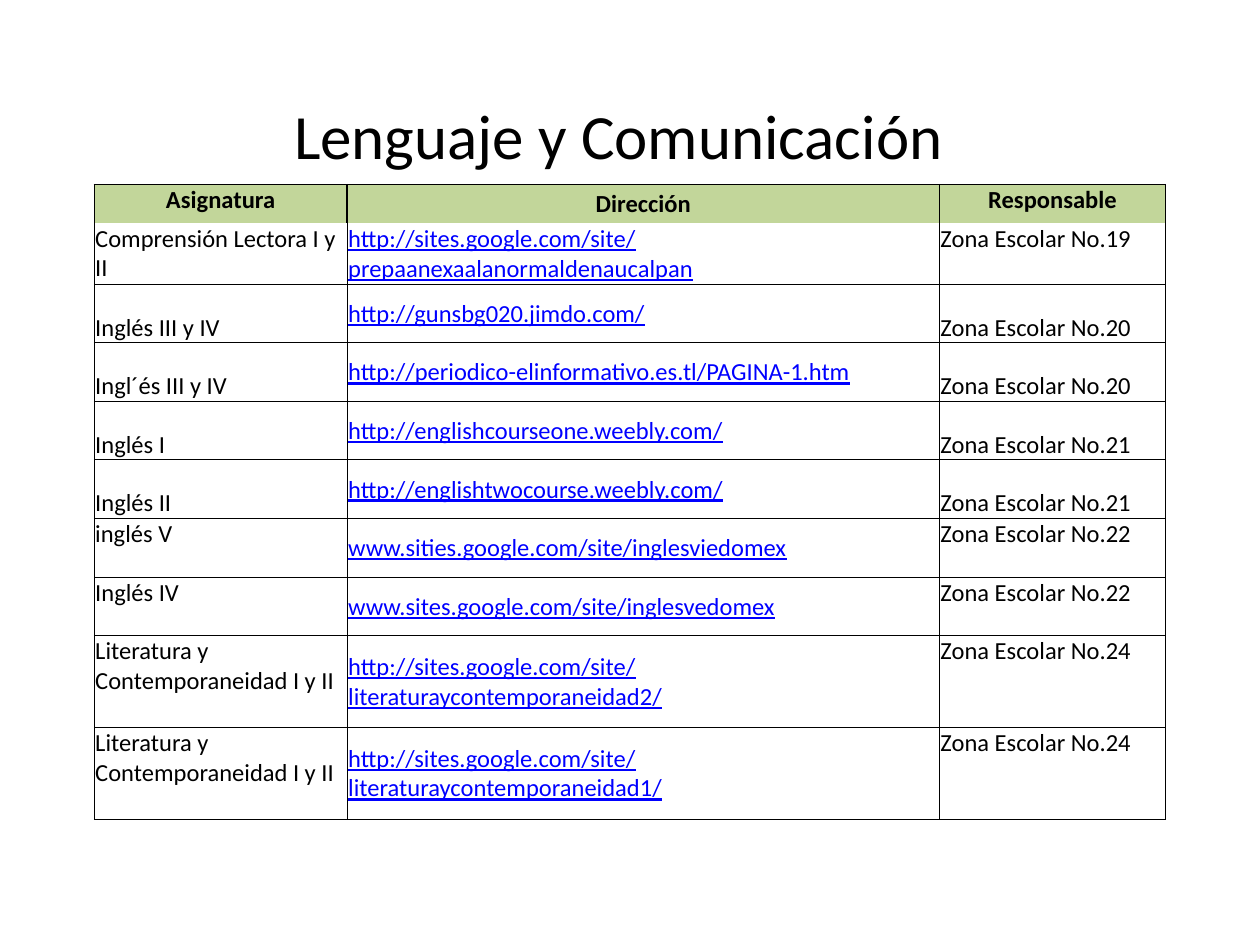
import pptx
import pptx.dml.color
import pptx.enum.text
import pptx.oxml
import pptx.oxml.ns
import pptx.util
from pptx.util import Cm

ALIGN = pptx.enum.text.PP_ALIGN
ANCHOR = pptx.enum.text.MSO_ANCHOR

HEADERS = ["Asignatura", "Dirección", "Responsable"]
# Subject, address, school zone number, anchor of the outer cells
COURSES = [
    ("Comprensión Lectora I y II", "http://sites.google.com/site/prepaanexaalanormaldenaucalpan", 19, ANCHOR.TOP),
    ("Inglés III y IV", "http://gunsbg020.jimdo.com/", 20, ANCHOR.BOTTOM),
    ("Ingl´és III y IV", "http://periodico-elinformativo.es.tl/PAGINA-1.htm", 20, ANCHOR.BOTTOM),
    ("Inglés I", "http://englishcourseone.weebly.com/", 21, ANCHOR.BOTTOM),
    ("Inglés II", "http://englishtwocourse.weebly.com/", 21, ANCHOR.BOTTOM),
    ("inglés V", "www.sities.google.com/site/inglesviedomex", 22, ANCHOR.TOP),
    ("Inglés IV", "www.sites.google.com/site/inglesvedomex", 22, ANCHOR.TOP),
    ("Literatura y Contemporaneidad I y II", "http://sites.google.com/site/literaturaycontemporaneidad2/", 24, ANCHOR.TOP),
    ("Literatura y Contemporaneidad I y II", "http://sites.google.com/site/literaturaycontemporaneidad1/", 24, ANCHOR.TOP),
]
COLUMN_WIDTHS = [5.1, 11.94, 4.56]
ROW_HEIGHTS = [0.77, 1.24] + [1.18] * 6 + [1.85] * 2


def color(value):
    return pptx.dml.color.RGBColor.from_string(value)


class SlideBuilder:
    font_name = "Calibri"
    black = "000000"
    link_blue = "0000FF"
    header_green = "C2D69A"

    def __init__(self, presentation):
        self.slide = presentation.slides.add_slide(presentation.slide_layouts[5])

    def add_text(self, paragraph, text, align=ALIGN.LEFT, text_color=black, **font_format):
        paragraph.alignment = align
        run = paragraph.add_run()
        run.text = text
        run.font.color.rgb = color(text_color)
        for name, value in {"name": self.font_name, **font_format}.items():
            setattr(run.font, name, value)

    def title(self, text, left, top, width, height):
        shape = self.slide.shapes.title
        position = {"left": left, "top": top, "width": width, "height": height}
        for name, value in position.items():
            setattr(shape, name, Cm(value))
        frame = shape.text_frame
        frame.auto_size = pptx.enum.text.MSO_AUTO_SIZE.NONE
        frame.vertical_anchor = ANCHOR.MIDDLE
        frame.paragraphs[0].line_spacing = 0.9
        self.add_text(frame.paragraphs[0], text, ALIGN.CENTER, size=pptx.util.Pt(36))

    def table(self, left, top, column_widths, row_heights):
        frame = self.slide.shapes.add_table(
            len(row_heights), len(column_widths), Cm(left), Cm(top),
            Cm(sum(column_widths)), Cm(sum(row_heights)))
        table = frame.table
        table.first_row = table.horz_banding = False
        for column, width in zip(table.columns, column_widths):
            column.width = Cm(width)
        for row, height in zip(table.rows, row_heights):
            row.height = Cm(height)
        return table

    def cell(self, cell, text, anchor, borders, fill=None, **text_format):
        cell_format = {"margin_left": Cm(0.02), "margin_right": Cm(0.02),
                       "margin_top": Cm(0.02), "margin_bottom": 0,
                       "vertical_anchor": anchor}
        for name, value in cell_format.items():
            setattr(cell, name, value)
        self.borders(cell, borders)
        if fill:
            cell.fill.solid()
            cell.fill.fore_color.rgb = color(fill)
        else:
            cell.fill.background()
        self.add_text(cell.text_frame.paragraphs[0], text, size=pptx.util.Pt(14), **text_format)

    def borders(self, cell, widths):
        """Draw the sides named in widths (points); leave the others bare."""
        properties = cell._tc.get_or_add_tcPr()
        namespace = pptx.oxml.ns.nsdecls("a")
        for side in "LRTB":
            width = pptx.util.Pt(widths.get(side, 0))
            paint = (f'<a:solidFill><a:srgbClr val="{self.black}"/></a:solidFill>'
                     if width else "<a:noFill/>")
            properties.append(pptx.oxml.parse_xml(
                f'<a:ln{side} {namespace} w="{width}">{paint}</a:ln{side}>'))


def main():
    presentation = pptx.Presentation()
    presentation.slide_width = Cm(25.4)
    presentation.slide_height = Cm(19.05)
    builder = SlideBuilder(presentation)

    # Title
    builder.title("Lenguaje y Comunicación ", 3.91, 1.73, 17.4, 2.16)

    # Table header
    table = builder.table(1.9, 3.72, COLUMN_WIDTHS, ROW_HEIGHTS)
    for index, header in enumerate(HEADERS):
        anchor = ANCHOR.MIDDLE if index == 1 else ANCHOR.TOP
        builder.cell(table.cell(0, index), header, anchor, dict.fromkeys("LRT", 1),
                     builder.header_green, align=ALIGN.CENTER, bold=True)

    # Courses
    for row, (subject, address, zone, anchor) in enumerate(COURSES, start=1):
        borders = dict.fromkeys("LRB" if row == 1 else "LRTB", 0.5)
        builder.cell(table.cell(row, 0), subject, anchor, borders)
        builder.cell(table.cell(row, 1), address, ANCHOR.MIDDLE, borders,
                     text_color=builder.link_blue, underline=True)
        builder.cell(table.cell(row, 2), f"Zona Escolar No.{zone}", anchor, borders)

    presentation.save("out.pptx")


if __name__ == "__main__":
    main()
